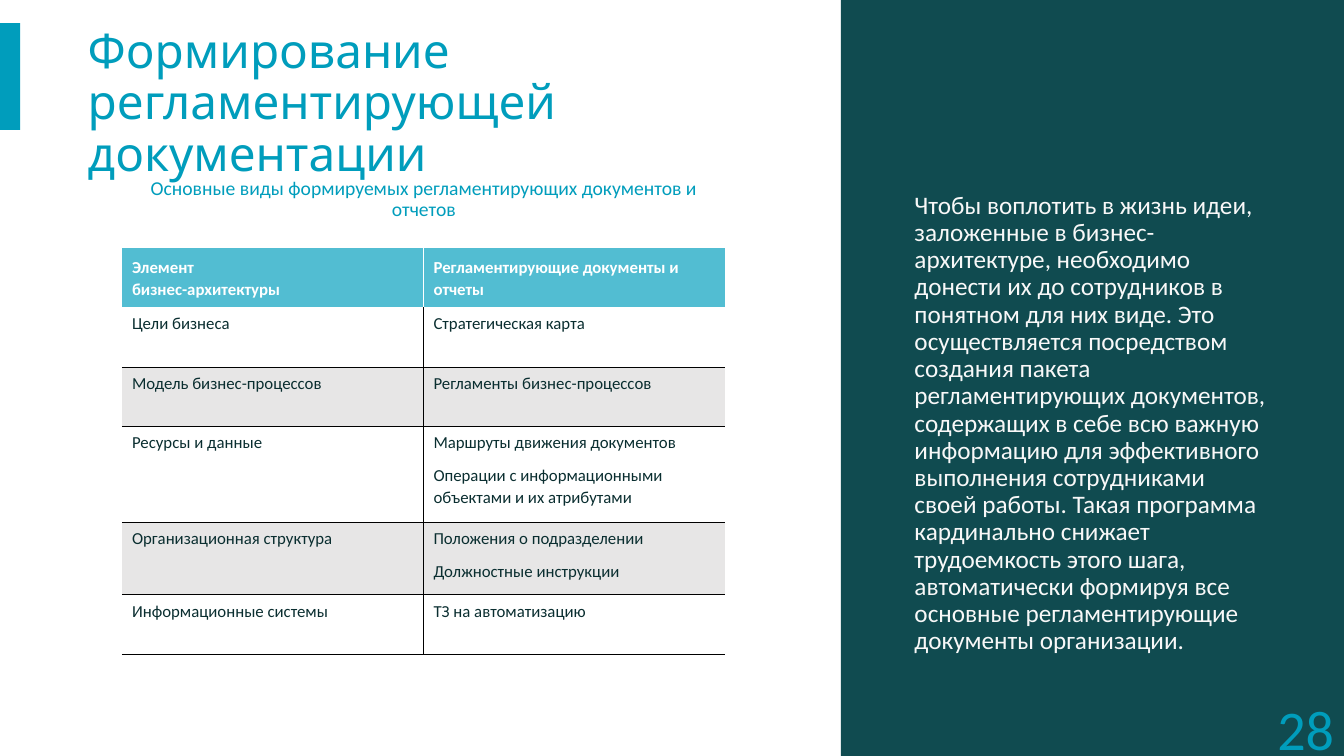
from lxml import etree
from pptx import Presentation
from pptx import util as u
from pptx.dml.color import RGBColor
from pptx.enum import shapes, text
from pptx.oxml import ns

TEAL, DARK, WHITE, BLACK = "009DBC", "104B50", "FFFFFF", "000000"
HEADER_FILL, CELL_TEXT, STRIPE = "52BDD2", "0A2E30", "E7E6E6"
LEFT, CENTER, RIGHT = text.PP_ALIGN.LEFT, text.PP_ALIGN.CENTER, text.PP_ALIGN.RIGHT

TITLE = "Формирование регламентирующей документации"
CAPTION = "Основные виды формируемых регламентирующих документов и отчетов"
SUMMARY = (
    "Чтобы воплотить в жизнь идеи, заложенные в бизнес-архитектуре, необходимо "
    "донести их до сотрудников в понятном для них виде. Это осуществляется "
    "посредством создания пакета регламентирующих документов, содержащих "
    "в себе всю важную информацию для эффективного выполнения сотрудниками "
    "своей работы. Такая программа кардинально снижает трудоемкость этого шага, "
    "автоматически формируя все основные регламентирующие документы организации."
)
DOCUMENTS = [
    (0.59, ["Элемент\nбизнес-архитектуры"], ["Регламентирующие документы и отчеты"]),
    (0.59, ["Цели бизнеса"], ["Стратегическая карта"]),
    (0.59, ["Модель бизнес-процессов"], ["Регламенты бизнес-процессов"]),
    (0.95, ["Ресурсы и данные"],
     ["Маршруты движения документов",
      "Операции с информационными объектами и их атрибутами"]),
    (0.72, ["Организационная структура"],
     ["Положения о подразделении", "Должностные инструкции"]),
    (0.59, ["Информационные системы"], ["ТЗ на автоматизацию"]),
]


def color(value):
    """Return the colour for a hex string."""
    return RGBColor.from_string(value)


def style(paragraph, size, hue, font="Calibri", align=LEFT, spacing=0.9, bold=False):
    """Format a whole paragraph."""
    paragraph.alignment = align
    paragraph.line_spacing = spacing
    paragraph.space_before = u.Pt(0)
    paragraph.font.size = u.Pt(size)
    paragraph.font.name = font
    paragraph.font.bold = bold
    paragraph.font.color.rgb = color(hue)


def place(shape, box):
    """Move a shape to a box of left, top, width and height in inches."""
    shape.left, shape.top, shape.width, shape.height = map(u.Inches, box)


def block(slide, box, fill):
    """Add a plain filled rectangle."""
    rect = slide.shapes.add_shape(shapes.MSO_SHAPE.RECTANGLE, *map(u.Inches, box))
    rect.shadow.inherit = False
    rect.fill.solid()
    rect.fill.fore_color.rgb = color(fill)
    rect.line.fill.background()
    return rect


def passage(placeholder, box, words, size, hue, **look):
    """Fill a placeholder with one paragraph without a bullet."""
    place(placeholder, box)
    frame = placeholder.text_frame
    frame.text = words
    frame.word_wrap = True
    frame.auto_size = text.MSO_AUTO_SIZE.NONE
    frame.vertical_anchor = text.MSO_ANCHOR.TOP
    paragraph = frame.paragraphs[0]
    props = paragraph._p.get_or_add_pPr()
    props.set("marL", "0")
    props.set("indent", "0")
    etree.SubElement(props, ns.qn("a:buNone"))
    style(paragraph, size, hue, **look)


def border(cell, side, hue=None, width=0.25):
    """Draw one cell edge, or hide it when no colour is given."""
    props = cell._tc.get_or_add_tcPr()
    edge = etree.Element(ns.qn("a:ln" + side), w=str(u.Pt(width)))
    if hue:
        fill = etree.SubElement(edge, ns.qn("a:solidFill"))
        etree.SubElement(fill, ns.qn("a:srgbClr"), val=hue)
    else:
        etree.SubElement(edge, ns.qn("a:noFill"))
    props.insert("LRTB".index(side), edge)


def document_cell(cell, lines, row, column):
    """Fill and format one cell of the documents table."""
    header = row == 0
    cell.fill.solid()
    cell.fill.fore_color.rgb = color(
        HEADER_FILL if header else WHITE if row % 2 else STRIPE)
    cell.vertical_anchor = text.MSO_ANCHOR.MIDDLE if header else text.MSO_ANCHOR.TOP
    frame = cell.text_frame
    for number, line in enumerate(lines):
        paragraph = frame.add_paragraph() if number else frame.paragraphs[0]
        paragraph.text = line
        style(paragraph, 12, WHITE if header else CELL_TEXT, spacing=1.07, bold=header)
        paragraph.space_after = u.Pt(8)
    divider = (WHITE, 1) if header else (BLACK, 0.25)
    border(cell, "L", *(divider if column else ()))
    border(cell, "R", *(() if column else divider))
    border(cell, "T", *(() if header else (WHITE, 0.5) if row == 1 else (BLACK,)))
    border(cell, "B", *((WHITE, 0.5) if header else (BLACK,)))


def documents_table(slide, box):
    """Add the table of architecture elements and their documents."""
    table = slide.shapes.add_table(len(DOCUMENTS), 2, *map(u.Inches, box)).table
    for column in table.columns:
        column.width = u.Inches(box[2] / 2)
    for row, (height, *entries) in enumerate(DOCUMENTS):
        table.rows[row].height = u.Inches(height)
        for column, lines in enumerate(entries):
            document_cell(table.cell(row, column), lines, row, column)


def main_region(slide, box):
    """Place the title, its accent, the caption and the table."""
    left, top, width, height = box
    passage(slide.shapes.title, (left + 0.77, top + 0.22, 8.04, 1.65),
            TITLE, 34, TEAL, font="Cabin")
    passage(slide.placeholders[1], (left + 1.21, top + 1.72, 5.99, 0.45),
            CAPTION, 14, TEAL, align=CENTER)
    documents_table(slide, (left + 1.21, top + 2.46, 5.98, 4.03))
    block(slide, (left, top + 0.23, 0.2, 1.06), TEAL)


def side_panel(slide, box):
    """Place the dark panel with the summary and the page number."""
    left, top, width, height = box
    panel = block(slide, box, DARK)
    slide.shapes._spTree.insert(2, panel._element)
    passage(slide.placeholders[2], (left + 0.63, top + 1.86, 3.73, 4.28),
            SUMMARY, 18, "F8F8F8")
    page = slide.shapes.add_textbox(
        *map(u.Inches, (left + width - 3, top + height - 0.48, 3, 0.4)))
    frame = page.text_frame
    frame.word_wrap = True
    frame.vertical_anchor = text.MSO_ANCHOR.MIDDLE
    frame.text = "28"
    style(frame.paragraphs[0], 40, TEAL, align=RIGHT, spacing=1.0)


def main():
    """Build the slide and save it."""
    deck = Presentation()
    deck.slide_width, deck.slide_height = u.Inches(13.33), u.Inches(7.5)
    slide = deck.slides.add_slide(deck.slide_layouts[3])
    main_region(slide, (0, 0, 8.34, 7.5))
    side_panel(slide, (8.34, 0, 4.99, 7.5))
    deck.save("out.pptx")


if __name__ == "__main__":
    main()
